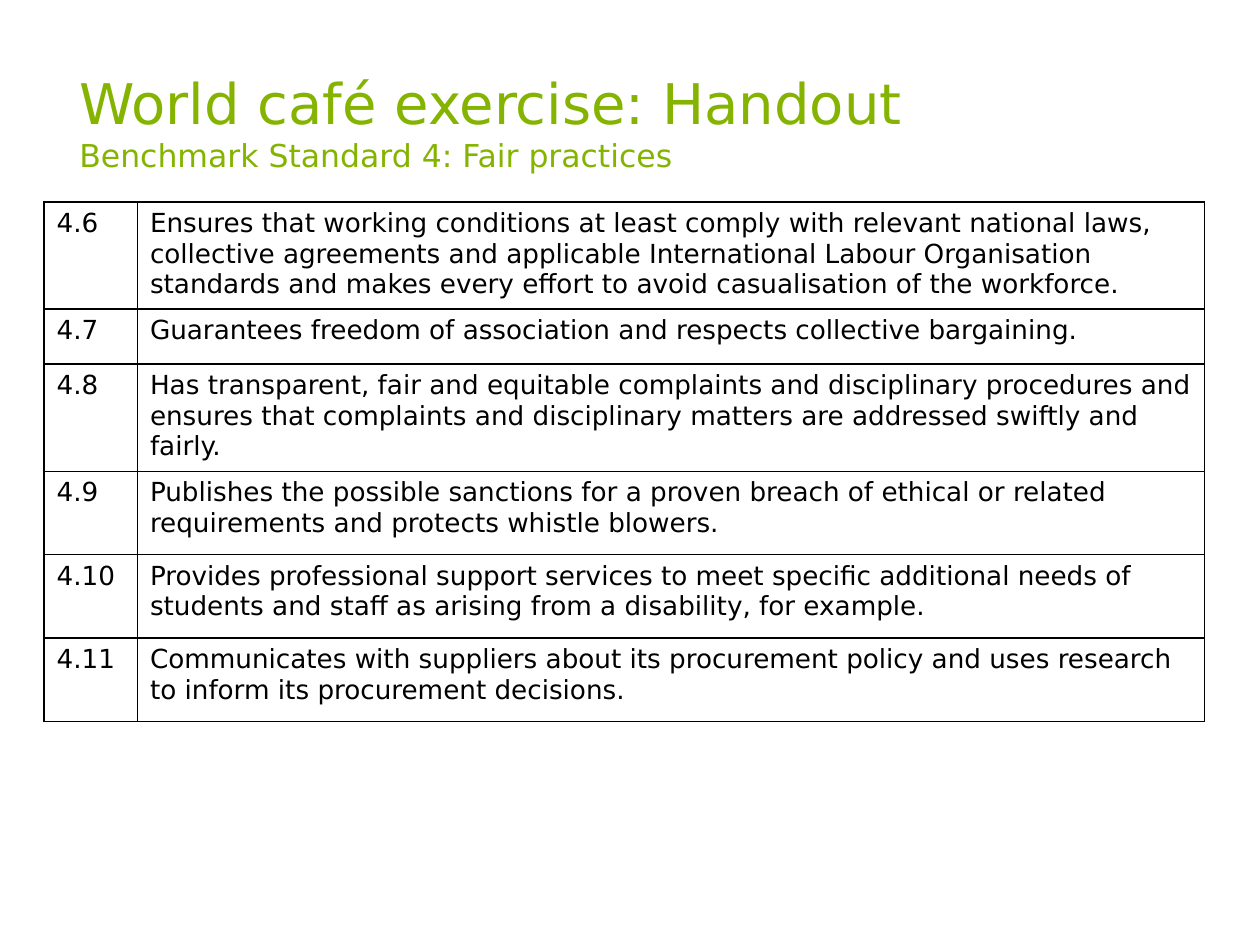
from lxml import etree
from pptx import Presentation
from pptx.dml.color import RGBColor
from pptx.enum.text import MSO_ANCHOR
from pptx.oxml import parse_xml
from pptx.util import Cm, Pt

MIDDLE = MSO_ANCHOR.MIDDLE
FONT = "DejaVu Sans"
GREEN = "84B400"
BLACK = "000000"
DRAWING_NS = "http://schemas.openxmlformats.org/drawingml/2006/main"


def rgb(hex_colour):
    return RGBColor.from_string(hex_colour)


def add_text(paragraph, text, size, colour):
    run = paragraph.add_run()
    run.text = text
    run.font.name = FONT
    run.font.size = Pt(size)
    run.font.color.rgb = rgb(colour)


prs = Presentation()
prs.slide_width = Cm(25.4)
prs.slide_height = Cm(19.05)
slide = prs.slides.add_slide(prs.slide_layouts[6])

# Heading
heading = slide.shapes.add_textbox(Cm(1.35), Cm(0.99), Cm(22.2), Cm(2.79)).text_frame
heading.word_wrap = True
heading.vertical_anchor = MIDDLE
heading.margin_bottom = 0
heading_line = heading.paragraphs[0]
add_text(heading_line, "World café exercise: Handout", size=32, colour=GREEN)
heading_line.add_line_break()
add_text(heading_line, "Benchmark Standard 4: Fair practices", size=18, colour=GREEN)

# Benchmark criteria: number, wording, row height in cm
criteria = [
    ("4.6", "Ensures that working conditions at least comply with relevant national laws, "
            "collective agreements and applicable International Labour Organisation "
            "standards and makes every effort to avoid casualisation of the workforce.", 1.68),
    ("4.7", "Guarantees freedom of association and respects collective bargaining.", 1.11),
    ("4.8", "Has transparent, fair and equitable complaints and disciplinary procedures and "
            "ensures that complaints and disciplinary matters are addressed swiftly and "
            "fairly.", 1.68),
    ("4.9", "Publishes the possible sanctions for a proven breach of ethical or related "
            "requirements and protects whistle blowers.", 1.68),
    ("4.10", "Provides professional support services to meet specific additional needs of "
             "students and staff as arising from a disability, for example.", 1.68),
    ("4.11", "Communicates with suppliers about its procurement policy and uses research "
             "to inform its procurement decisions.", 1.68),
]

table = slide.shapes.add_table(
    len(criteria), 2, Cm(0.89), Cm(4.07), Cm(23.39), Cm(10.46)).table
table.first_row = False
table.horz_banding = False
table.columns[0].width = Cm(1.88)
table.columns[1].width = Cm(21.51)

border = etree.Element(f"{{{DRAWING_NS}}}ln", nsmap={"a": DRAWING_NS}, w=str(Pt(1)))
border_fill = etree.SubElement(border, f"{{{DRAWING_NS}}}solidFill")
etree.SubElement(border_fill, f"{{{DRAWING_NS}}}srgbClr", val=BLACK)
border_xml = etree.tostring(border)

for row, (number, wording, height) in enumerate(criteria):
    table.rows[row].height = Cm(height)
    for column, text in enumerate((number, wording)):
        cell = table.cell(row, column)
        add_text(cell.text_frame.paragraphs[0], text, size=15, colour=BLACK)
        cell_properties = cell._tc.get_or_add_tcPr()
        for side in ("lnL", "lnR", "lnT", "lnB"):
            edge = parse_xml(border_xml)
            edge.tag = f"{{{DRAWING_NS}}}{side}"
            cell_properties.append(edge)
        cell.fill.background()

prs.save("out.pptx")
